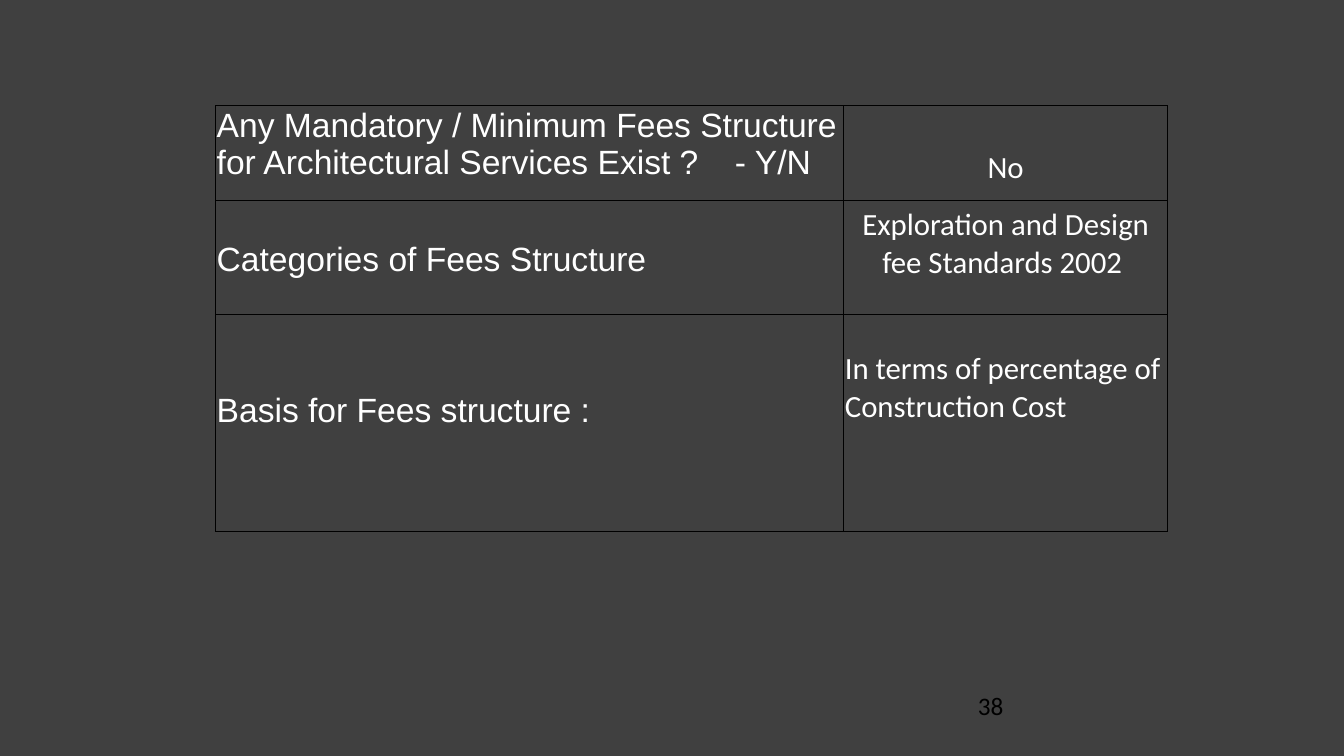
from lxml import etree
from pptx import Presentation
from pptx.dml.color import RGBColor
from pptx.enum.shapes import MSO_SHAPE
from pptx.enum.text import PP_ALIGN
from pptx.oxml.ns import qn
from pptx.util import Inches, Pt

RECT = MSO_SHAPE.RECTANGLE
LEFT, CENTER = PP_ALIGN.LEFT, PP_ALIGN.CENTER
CHARCOAL = RGBColor(0x40, 0x40, 0x40)
WHITE = RGBColor(0xFF, 0xFF, 0xFF)
BLACK = RGBColor(0x00, 0x00, 0x00)

QUESTION = {"name": "Arial", "size": Pt(24)}
ANSWER = {"name": "Calibri", "size": Pt(22)}
PAGE_NUMBER = {"name": "Calibri", "size": Pt(18), "color": BLACK}
TIGHT = (0.01, 0.01, 0)    # left, right and bottom margins in inches
ROOMY = (0.12, 0.12, 0.06)

# Each cell: text, font, alignment, side and bottom margins, top margin
FEES = [
    [("Any Mandatory / Minimum Fees Structure for Architectural Services "
      "Exist ?\t- Y/N", QUESTION, LEFT, TIGHT, 0.01),
     ("No", ANSWER, CENTER, ROOMY, 0.43)],
    [("Categories of Fees Structure", QUESTION, LEFT, TIGHT, 0.4),
     ("Exploration and Design fee Standards 2002 ", ANSWER, CENTER, ROOMY, 0.06)],
    [("Basis for Fees structure :", QUESTION, LEFT, TIGHT, 0.77),
     ("In terms of percentage of Construction Cost", ANSWER, LEFT, TIGHT, 0.36)],
]
COLUMNS = [46.74, 24.08]       # percent of slide width
ROWS = [12.53, 15.07, 28.67]   # percent of slide height
YES_NO_TAB = Inches(5.14)


class SlideBuilder:
    """Draws on one slide; positions and sizes are percentages of its size."""

    def __init__(self, prs):
        self.prs = prs
        self.slide = prs.slides.add_slide(prs.slide_layouts[6])
        self.font = {"color": WHITE}

    def x(self, share):
        return round(self.prs.slide_width * share / 100)

    def y(self, share):
        return round(self.prs.slide_height * share / 100)

    def box(self, left, top, width, height):
        return self.x(left), self.y(top), self.x(width), self.y(height)

    def rectangle(self, left, top, width, height, color):
        sp = self.slide.shapes.add_shape(RECT, *self.box(left, top, width, height))
        sp.shadow.inherit = False
        sp.fill.solid()
        sp.fill.fore_color.rgb = color
        sp.line.fill.background()

    def set_text(self, tf, text, font, align=LEFT):
        tf.word_wrap = True
        p = tf.paragraphs[0]
        p.alignment = align
        if "\t" in text:
            tabs = etree.SubElement(p._p.get_or_add_pPr(), qn("a:tabLst"))
            etree.SubElement(tabs, qn("a:tab"), pos=str(YES_NO_TAB), algn="l")
        r = p.add_run()
        r.text = text
        for key, value in {**self.font, **font}.items():
            if key == "color":
                r.font.color.rgb = value
            else:
                setattr(r.font, key, value)

    def text(self, left, top, width, height, text, font):
        sp = self.slide.shapes.add_textbox(*self.box(left, top, width, height))
        self.set_text(sp.text_frame, text, font)

    def border(self, cell, color, width):
        tc_pr = cell._tc.get_or_add_tcPr()
        for i, side in enumerate(("lnL", "lnR", "lnT", "lnB")):
            ln = etree.Element(qn(f"a:{side}"), w=str(width))
            fill = etree.SubElement(ln, qn("a:solidFill"))
            etree.SubElement(fill, qn("a:srgbClr"), val=str(color))
            tc_pr.insert(i, ln)

    def table(self, left, top, columns, rows, cells):
        frame = self.slide.shapes.add_table(
            len(rows), len(columns), *self.box(left, top, sum(columns), sum(rows)))
        table = frame.table
        table.first_row = table.horz_banding = False
        for column, share in zip(table.columns, columns):
            column.width = self.x(share)
        for row, share, contents in zip(table.rows, rows, cells):
            row.height = self.y(share)
            for cell, content in zip(row.cells, contents):
                self.fill_cell(cell, *content)

    def fill_cell(self, cell, text, font, align, margins, margin_top):
        sides = ("left", "right", "bottom", "top")
        for side, inches in zip(sides, (*margins, margin_top)):
            setattr(cell, f"margin_{side}", Inches(inches))
        cell.fill.background()
        self.border(cell, BLACK, Pt(1))
        self.set_text(cell.text_frame, text, font, align)


def main():
    prs = Presentation()
    prs.slide_width, prs.slide_height = Inches(13.33), Inches(7.5)
    s = SlideBuilder(prs)
    s.rectangle(0, 0, 100, 100, CHARCOAL)
    s.text(72.02, 90.67, 23.33, 6.93, "38", PAGE_NUMBER)
    s.table(16.05, 14, COLUMNS, ROWS, FEES)
    prs.save("out.pptx")


if __name__ == "__main__":
    main()
